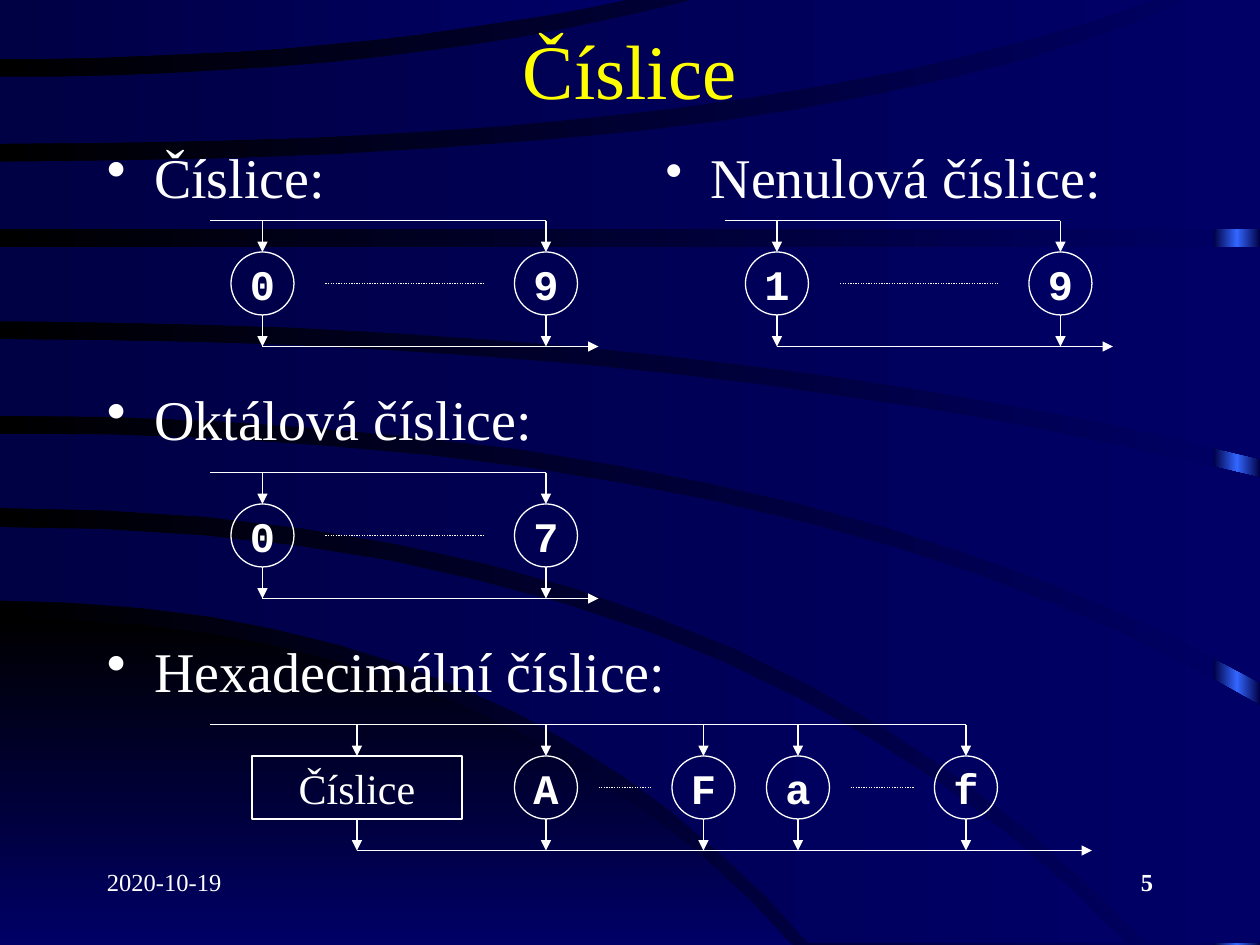
from dataclasses import dataclass

from lxml import etree
from pptx import Presentation
from pptx import util as u
from pptx.dml.color import RGBColor
from pptx.enum import dml, shapes, text
from pptx.oxml.ns import qn

PX = 7620  # EMU per px, 120 px to the inch
WIDTH, HEIGHT = 1200, 900
SERIF, MONO = "Times New Roman", "Courier New"
WHITE, YELLOW = "FFFFFF", "FFFF00"
BLACK, NAVY, MIDNIGHT, BRIGHT = "000000", "000066", "000044", "3366FF"
NODE_SIZE = 60
STEP = 30  # length of each vertical arrow
CURVE_STEPS = 14


@dataclass
class Edge:
    """Quadratic curve that leaves the left side level and turns at bend."""
    start_y: int
    bend: int
    end_x: int
    end_y: int

    def points(self) -> list[tuple[int, int]]:
        ts = [i / CURVE_STEPS for i in range(CURVE_STEPS + 1)]
        return [(round(2 * t * (1 - t) * self.bend + t * t * self.end_x),
                 round(self.start_y + t * t * (self.end_y - self.start_y))) for t in ts]


@dataclass
class Band:
    upper: Edge
    lower: Edge

    def outline(self) -> list[tuple[int, int]]:
        wide, narrow = self.upper, self.lower
        if wide.end_x < narrow.end_x:
            wide, narrow = narrow, wide
        corner = (wide.end_x, narrow.end_y)
        return self.upper.points() + [corner] + self.lower.points()[::-1]


@dataclass
class Node:
    label: str
    centre: int
    width: int = NODE_SIZE
    shape: shapes.MSO_SHAPE = shapes.MSO_SHAPE.OVAL
    font: str = MONO


@dataclass
class Diagram:
    top: int
    start: int
    end: int
    nodes: list[Node]
    dots: list[tuple[int, int]]


@dataclass
class Label:
    words: str
    box: tuple[int, int, int, int]
    size: int
    color: str = WHITE
    bold: bool = False
    align: text.PP_ALIGN = text.PP_ALIGN.LEFT
    anchor: text.MSO_ANCHOR = text.MSO_ANCHOR.TOP
    indent: int = 0
    bullet_percent: int = 100


def level(y: int, end_x: int = WIDTH) -> Edge:
    return Edge(y, end_x // 2, end_x, y)


FLOOR = Band(Edge(589, 478, 754, HEIGHT), level(HEIGHT, 754))
BANDS = [
    Band(Edge(502, 694, 1072, 898), Edge(572, 489, 770, 898)),
    Band(Edge(413, 766, WIDTH, 672), Edge(484, 707, 1091, 898)),
    Band(Edge(323, 674, WIDTH, 455), Edge(396, 750, WIDTH, 650)),
    Band(level(235), Edge(306, 674, WIDTH, 437)),
    Band(Edge(154, 803, 1130, 0), level(218)),
    Band(Edge(73, 386, 660, 0), Edge(137, 735, 1098, 0)),
    Band(level(0, 595), Edge(56, 326, 595, 0)),
]


def digit_range(top: int, start: int, first: str, last: str) -> Diagram:
    """Diagram of two digits with a dotted line between them."""
    left, right = start + 50, start + 320
    return Diagram(top, start, right + 50, [Node(first, left), Node(last, right)],
                   [(left + 60, right - 60)])


DIAGRAMS = [
    Diagram(690, 200, 1040,
            [Node("Číslice", 340, 200, shapes.MSO_SHAPE.RECTANGLE, SERIF),
             Node("A", 520), Node("F", 670), Node("a", 760), Node("f", 920)],
            [(570, 620), (810, 870)]),
    digit_range(450, 200, "0", "7"),
    digit_range(210, 200, "0", "9"),
    digit_range(210, 690, "1", "9"),
]

LABELS = [
    Label("2020-10-19", (90, 820, 250, 60), 14),
    Label("5", (860, 820, 250, 60), 14, bold=True, align=text.PP_ALIGN.RIGHT),
    Label("Číslice", (90, 20, 1020, 90), 44, YELLOW,
          align=text.PP_ALIGN.CENTER, anchor=text.MSO_ANCHOR.MIDDLE),
    Label("Číslice:", (90, 130, 500, 70), 32, indent=45),
    Label("Nenulová číslice:", (622, 130, 488, 70), 32, indent=43, bullet_percent=88),
    Label("Oktálová číslice:", (90, 360, 1020, 70), 32, indent=45),
    Label("Hexadecimální číslice:", (90, 600, 1020, 80), 32, indent=45),
]


def px(*lengths: int) -> list[u.Emu]:
    return [u.Emu(length * PX) for length in lengths]


def rgb(color: str) -> RGBColor:
    return RGBColor.from_string(color)


def fill_gradient(fill, owner, colors: list[str], angle: int = 0) -> None:
    """Spread the colours evenly; the angle runs clockwise in degrees."""
    fill.gradient()
    stops = next(owner.iter(qn("a:gsLst")))
    for stop in list(stops):
        stops.remove(stop)
    for i, color in enumerate(colors):
        stop = etree.SubElement(stops, qn("a:gs"), pos=str(i * 100000 // (len(colors) - 1)))
        etree.SubElement(stop, qn("a:srgbClr"), val=color)
    next(owner.iter(qn("a:lin"))).set("ang", str(angle * 60000))


def finish_scenery(shape, colors: list[str], angle: int = 0) -> None:
    shape.shadow.inherit = False
    shape.line.fill.background()
    fill_gradient(shape.fill, shape._element, colors, angle)


def draw_band(slide, band: Band, colors: list[str], angle: int = 0) -> None:
    first, *rest = band.outline()
    builder = slide.shapes.build_freeform(*first, scale=PX)
    builder.add_line_segments(rest, close=True)
    finish_scenery(builder.convert_to_shape(), colors, angle)


def draw_line(slide, x1: int, y1: int, x2: int, y2: int,
              arrow: bool = False, dotted: bool = False) -> None:
    line = slide.shapes.add_connector(shapes.MSO_CONNECTOR.STRAIGHT, *px(x1, y1, x2, y2))
    line.line.color.rgb = rgb(WHITE)
    line.line.width = u.Pt(0.75)
    if dotted:
        line.line.dash_style = dml.MSO_LINE.ROUND_DOT
    if arrow:
        etree.SubElement(line._element.spPr.find(qn("a:ln")), qn("a:tailEnd"), type="triangle")
    etree.SubElement(line._element.spPr, qn("a:effectLst"))


def write(frame, words: str, size: int, font: str, color: str, bold: bool, align) -> None:
    frame.text = words
    paragraph = frame.paragraphs[0]
    paragraph.alignment = align
    style = paragraph.runs[0].font
    style.name, style.size, style.bold = font, u.Pt(size), bold
    style.color.rgb = rgb(color)


def draw_node(slide, node: Node, top: int) -> None:
    shape = slide.shapes.add_shape(
        node.shape, *px(node.centre - node.width // 2, top, node.width, NODE_SIZE))
    shape.shadow.inherit = False
    shape.fill.background()
    shape.line.color.rgb = rgb(WHITE)
    shape.line.width = u.Pt(0.75)
    frame = shape.text_frame
    frame.word_wrap = False
    frame.vertical_anchor = text.MSO_ANCHOR.MIDDLE
    write(frame, node.label, 24, node.font, WHITE, node.font == MONO, text.PP_ALIGN.CENTER)


def draw_diagram(slide, diagram: Diagram) -> None:
    node_top = diagram.top + STEP
    node_bottom = node_top + NODE_SIZE
    exit_y = node_bottom + STEP
    first, last = diagram.nodes[0].centre, diagram.nodes[-1].centre
    draw_line(slide, diagram.start, diagram.top, last, diagram.top)
    draw_line(slide, first, exit_y, diagram.end, exit_y, arrow=True)
    for node in diagram.nodes:
        draw_node(slide, node, node_top)
        for y in (diagram.top, node_bottom):
            draw_line(slide, node.centre, y, node.centre, y + STEP, arrow=True)
    middle = node_top + NODE_SIZE // 2
    for left, right in diagram.dots:
        draw_line(slide, left, middle, right, middle, dotted=True)


def draw_label(slide, label: Label) -> None:
    frame = slide.shapes.add_textbox(*px(*label.box)).text_frame
    frame.word_wrap = True
    frame.vertical_anchor = label.anchor
    write(frame, label.words, label.size, SERIF, label.color, label.bold, label.align)
    if label.indent:
        paragraph = frame.paragraphs[0]
        paragraph.space_before = u.Pt(4)
        properties = paragraph._p.get_or_add_pPr()
        properties.set("marL", str(label.indent * PX))
        properties.set("indent", str(-label.indent * PX))
        etree.SubElement(properties, qn("a:buSzPct"), val=str(label.bullet_percent * 1000))
        etree.SubElement(properties, qn("a:buChar"), char="•")


def main() -> None:
    deck = Presentation()
    deck.slide_width, deck.slide_height = px(WIDTH, HEIGHT)
    slide = deck.slides.add_slide(deck.slide_layouts[6])
    fill_gradient(slide.background.fill, slide._element, [BLACK, NAVY])
    glow = slide.shapes.add_shape(shapes.MSO_SHAPE.RECTANGLE, *px(1156, 0, 44, HEIGHT))
    finish_scenery(glow, [MIDNIGHT, BRIGHT, MIDNIGHT])
    draw_band(slide, FLOOR, [BLACK, NAVY], angle=90)
    for band in BANDS:
        draw_band(slide, band, [MIDNIGHT, NAVY])
    for diagram in DIAGRAMS:
        draw_diagram(slide, diagram)
    for label in LABELS:
        draw_label(slide, label)
    deck.save("out.pptx")


if __name__ == "__main__":
    main()
